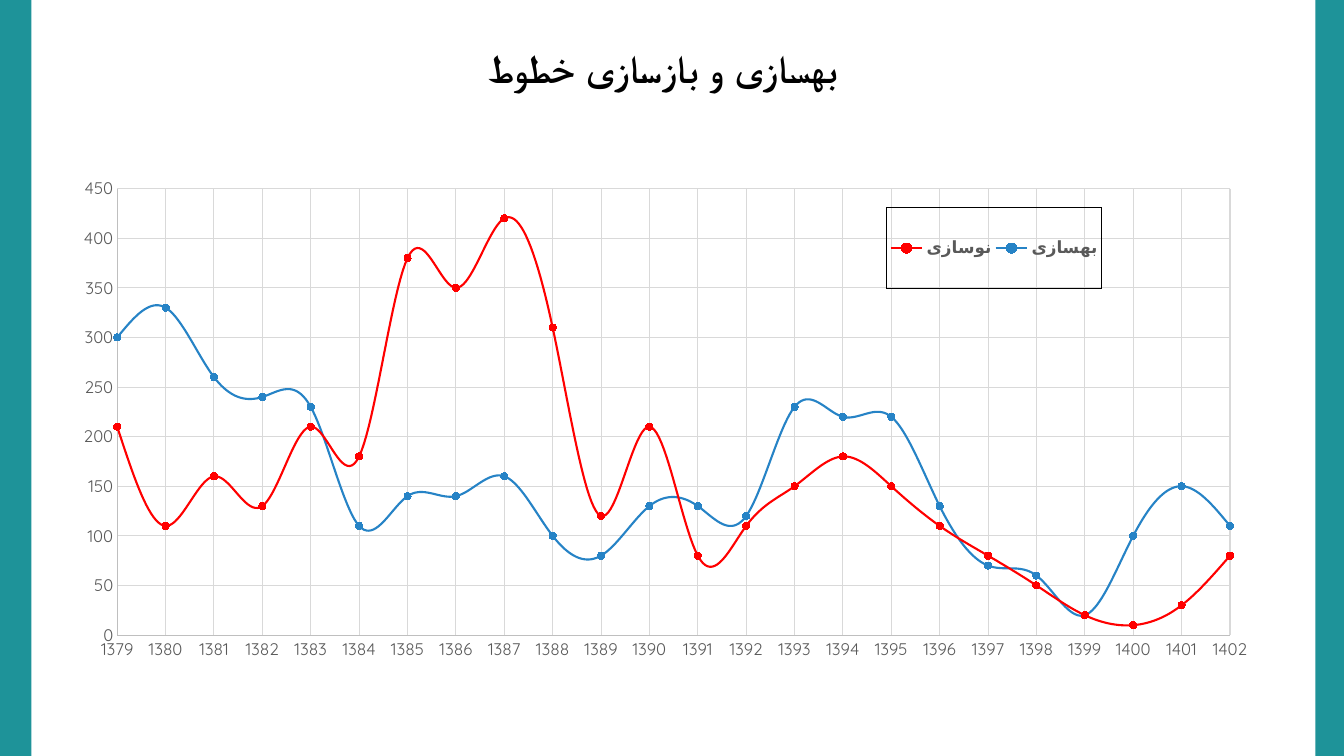
from collections import namedtuple

from pptx import Presentation
from pptx.chart.data import XyChartData
from pptx.dml.color import RGBColor
from pptx.enum.chart import XL_CHART_TYPE as ChartType
from pptx.enum.chart import XL_LEGEND_POSITION as LegendPosition
from pptx.enum.chart import XL_MARKER_STYLE as MarkerStyle
from pptx.enum.chart import XL_TICK_MARK as TickMark
from pptx.enum.shapes import MSO_SHAPE as Shape
from pptx.enum.text import PP_ALIGN as Align
from pptx.oxml import parse_xml
from pptx.oxml.ns import nsdecls, qn
from pptx.util import Pt

Box = namedtuple("Box", "left top width height")

TEAL = RGBColor(0x1E, 0x93, 0x99)
RED = RGBColor(0xFF, 0x00, 0x00)
BLUE = RGBColor(0x26, 0x83, 0xC6)
BLACK = RGBColor(0x00, 0x00, 0x00)
LABEL_GREY = RGBColor(0x59, 0x59, 0x59)
AXIS_GREY = RGBColor(0xBF, 0xBF, 0xBF)
GRID_GREY = RGBColor(0xD9, 0xD9, 0xD9)

TITLE_FONT = "Arial"
CHART_FONT = "Quicksand"
PAGE = Box(0, 0, 960, 540)
BAR_WIDTH = 22.4
TITLE = "بهسازی و بازسازی خطوط"
FIRST_YEAR, LAST_YEAR = 1379, 1402
SERIES = [
    ("نوسازی", RED,
     [210, 110, 160, 130, 210, 180, 380, 350, 420, 310, 120, 210,
      80, 110, 150, 180, 150, 110, 80, 50, 20, 10, 30, 80]),
    ("بهسازی", BLUE,
     [300, 330, 260, 240, 230, 110, 140, 140, 160, 100, 80, 130,
      130, 120, 230, 220, 220, 130, 70, 60, 20, 100, 150, 110]),
]


def points(box):
    return [Pt(length) for length in box]


def add_side_bars(page, box):
    for left in (box.left, box.left + box.width - 20.4):
        bar = page.shapes.add_shape(
            Shape.RECTANGLE, *points(Box(left, box.top, BAR_WIDTH, box.height)))
        bar.shadow.inherit = False
        bar.fill.solid()
        bar.fill.fore_color.rgb = TEAL
        bar.line.fill.background()


def add_title(page, box):
    frame = page.shapes.add_textbox(*points(box)).text_frame
    frame.word_wrap = True
    para = frame.paragraphs[0]
    para.alignment = Align.CENTER
    para._p.get_or_add_pPr().set("rtl", "1")
    span = para.add_run()
    span.text = TITLE
    style_font(span.font, TITLE_FONT, 28, BLACK, True)
    span.font._element.append(
        parse_xml(f'<a:cs {nsdecls("a")} typeface="{CHART_FONT}"/>'))


def style_font(font, name, size, color, bold=False):
    font.name = name
    font.size = Pt(size)
    font.bold = bold
    font.color.rgb = color


def style_line(line, color, width):
    line.color.rgb = color
    line.width = Pt(width)


def manual_layout(box, inner=False):
    """Return a layout element for a box given in fractions of the chart."""
    target = '<c:layoutTarget val="inner"/>' if inner else ""
    sizes = "".join(f'<c:{key} val="{value}"/>' for key, value in zip("xywh", box))
    return parse_xml(
        f'<c:layout {nsdecls("c")}><c:manualLayout>{target}'
        f'<c:xMode val="edge"/><c:yMode val="edge"/>{sizes}'
        '</c:manualLayout></c:layout>')


def drop_layout(element):
    for layout in element.findall(qn("c:layout")):
        element.remove(layout)


def style_axis(axis, low, high, step):
    axis.minimum_scale, axis.maximum_scale, axis.major_unit = low, high, step
    axis.major_tick_mark = axis.minor_tick_mark = TickMark.NONE
    axis.has_major_gridlines = True
    style_line(axis.major_gridlines.format.line, GRID_GREY, 0.75)
    style_line(axis.format.line, AXIS_GREY, 0.75)
    style_font(axis.tick_labels.font, CHART_FONT, 12, LABEL_GREY)
    axis.tick_labels.number_format = "General"
    axis.tick_labels.number_format_is_linked = False


def style_series(series, color):
    style_line(series.format.line, color, 1.5)
    series.marker.style = MarkerStyle.CIRCLE
    series.marker.size = 5
    series.marker.format.fill.solid()
    series.marker.format.fill.fore_color.rgb = color
    style_line(series.marker.format.line, color, 0.75)
    series._element.find(qn("c:smooth")).set("val", "1")


def add_legend(chart, box):
    chart.has_legend = True
    legend = chart.legend
    legend.position = LegendPosition.RIGHT
    legend.include_in_layout = False
    style_font(legend.font, CHART_FONT, 12, LABEL_GREY, True)
    drop_layout(legend._element)
    overlay = legend._element.find(qn("c:overlay"))
    overlay.addprevious(manual_layout(box))
    overlay.addnext(parse_xml(
        f'<c:spPr {nsdecls("c", "a")}><a:noFill/><a:ln><a:solidFill>'
        f'<a:srgbClr val="{BLACK}"/></a:solidFill></a:ln></c:spPr>'))


def add_history_chart(page, box):
    chart_data = XyChartData()
    for name, _, values in SERIES:
        series_data = chart_data.add_series(name)
        for year, value in enumerate(values, FIRST_YEAR):
            series_data.add_data_point(year, value)
    chart = page.shapes.add_chart(
        ChartType.XY_SCATTER_SMOOTH, *points(box), chart_data).chart
    chart.has_title = False
    style_font(chart.font, CHART_FONT, 10, BLACK)
    plot = chart.plots[0]
    plot.vary_by_categories = False
    for series, (_, color, _) in zip(plot.series, SERIES):
        style_series(series, color)
    style_axis(chart.category_axis, FIRST_YEAR, LAST_YEAR, 1)
    style_axis(chart.value_axis, 0, 450, 50)
    plot_area = plot._element.getparent()
    drop_layout(plot_area)
    plot_area.insert(0, manual_layout(Box(0.041, 0.034, 0.92, 0.886), inner=True))
    add_legend(chart, Box(0.677, 0.071, 0.178, 0.162))


def main():
    deck = Presentation()
    deck.slide_width, deck.slide_height = Pt(PAGE.width), Pt(PAGE.height)
    page = deck.slides.add_slide(deck.slide_layouts[6])
    add_side_bars(page, PAGE)
    add_title(page, Box(214.5, 28, 518.4, 41))
    add_history_chart(page, Box(48.3, 122.5, 864, 360))
    deck.save("out.pptx")


if __name__ == "__main__":
    main()
